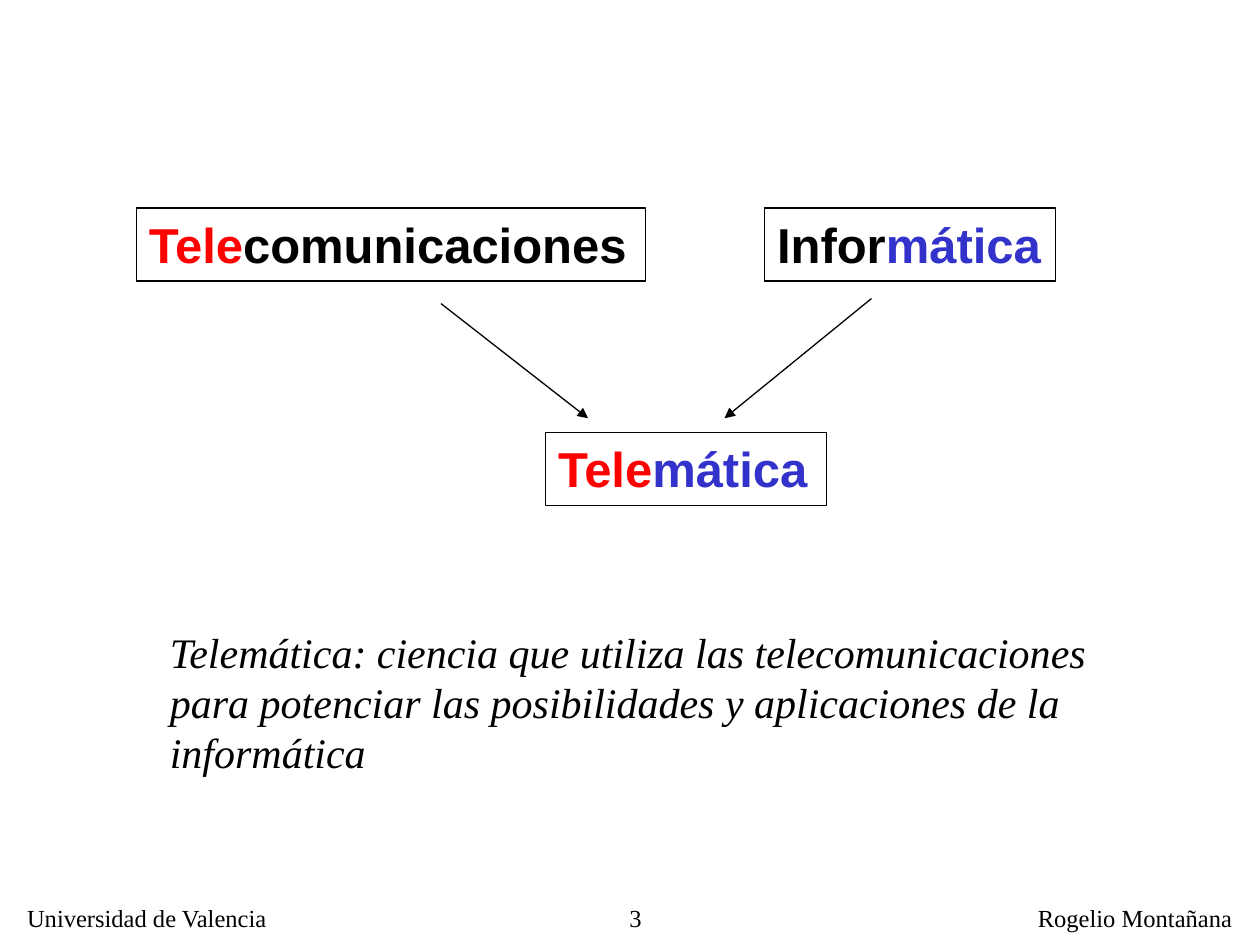
import pptx
import pptx.dml.color
import pptx.enum.shapes
import pptx.enum.text
import pptx.oxml
import pptx.oxml.ns
import pptx.util

Pt = pptx.util.Pt
BLACK, RED, BLUE = "000000", "FF0000", "3333CC"
SERIF = {"name": "Times New Roman"}
FOOTER = {**SERIF, "size": Pt(14)}
DEFINITION = {**SERIF, "size": Pt(24), "italic": True}
TERM = {"name": "Arial", "size": Pt(28), "bold": True}


def color(value):
    """Return the colour for a hex string."""
    return pptx.dml.color.RGBColor.from_string(value)


def write_text(shape, runs, font_format, align="LEFT", wrap=False):
    """Write coloured runs as one paragraph in a shape."""
    frame = shape.text_frame
    frame.word_wrap = wrap
    frame.vertical_anchor = pptx.enum.text.MSO_ANCHOR.TOP
    paragraph = frame.paragraphs[0]
    paragraph.alignment = getattr(pptx.enum.text.PP_ALIGN, align)
    for text, run_color in runs:
        run = paragraph.add_run()
        run.text = text
        run.font.color.rgb = color(run_color)
        for attribute, value in font_format.items():
            setattr(run.font, attribute, value)


def add_text(slide, box, text, font_format, **layout):
    """Add a plain black text box."""
    shape = slide.shapes.add_textbox(*map(Pt, box))
    write_text(shape, [(text, BLACK)], font_format, **layout)


def add_term(slide, left, top, width, runs):
    """Add an outlined box with a term in coloured parts."""
    rectangle = pptx.enum.shapes.MSO_SHAPE.RECTANGLE
    shape = slide.shapes.add_shape(rectangle, *map(Pt, (left, top, width, 41.8)))
    shape.shadow.inherit = False
    shape.fill.background()
    shape.line.color.rgb = color(BLACK)
    shape.line.width = Pt(0.75)
    write_text(shape, runs, TERM)


def add_arrow(slide, *ends):
    """Add a straight line with an arrowhead at its end."""
    straight = pptx.enum.shapes.MSO_CONNECTOR.STRAIGHT
    arrow = slide.shapes.add_connector(straight, *map(Pt, ends))
    arrow.line.color.rgb = color(BLACK)
    arrow.line.width = Pt(0.75)
    head = pptx.oxml.parse_xml(
        f'<a:tailEnd {pptx.oxml.ns.nsdecls("a")} type="triangle"/>')
    arrow.line._get_or_add_ln().append(head)
    effects = pptx.oxml.parse_xml(f'<a:effectLst {pptx.oxml.ns.nsdecls("a")}/>')
    arrow._element.spPr.append(effects)


def main():
    """Build the slide and save it."""
    presentation = pptx.Presentation()
    presentation.slide_width, presentation.slide_height = Pt(720), Pt(540)
    slide = presentation.slides.add_slide(presentation.slide_layouts[6])

    add_text(slide, (8.4, 512.5, 153.4, 24), "Universidad de Valencia", FOOTER)
    add_text(slide, (586, 512.5, 125.3, 24), "Rogelio Montañana", FOOTER)
    add_text(slide, (297.5, 512.5, 76.3, 22.5), "3", FOOTER, align="RIGHT", wrap=True)

    add_term(slide, 78, 118.8, 291, [("Tele", RED), ("comunicaciones", BLACK)])
    add_term(slide, 437, 118.8, 166.3, [("Infor", BLACK), ("mática", BLUE)])
    add_term(slide, 311.8, 247, 160.5, [("Tele", RED), ("mática", BLUE)])

    add_arrow(slide, 252, 173.5, 336, 239)
    add_arrow(slide, 498, 170.6, 414, 239)

    definition = ("Telemática: ciencia que utiliza las telecomunicaciones para "
                  "potenciar las posibilidades y aplicaciones de la informática")
    add_text(slide, (90, 354.3, 540, 93.6), definition, DEFINITION, wrap=True)

    presentation.save("out.pptx")


if __name__ == "__main__":
    main()
